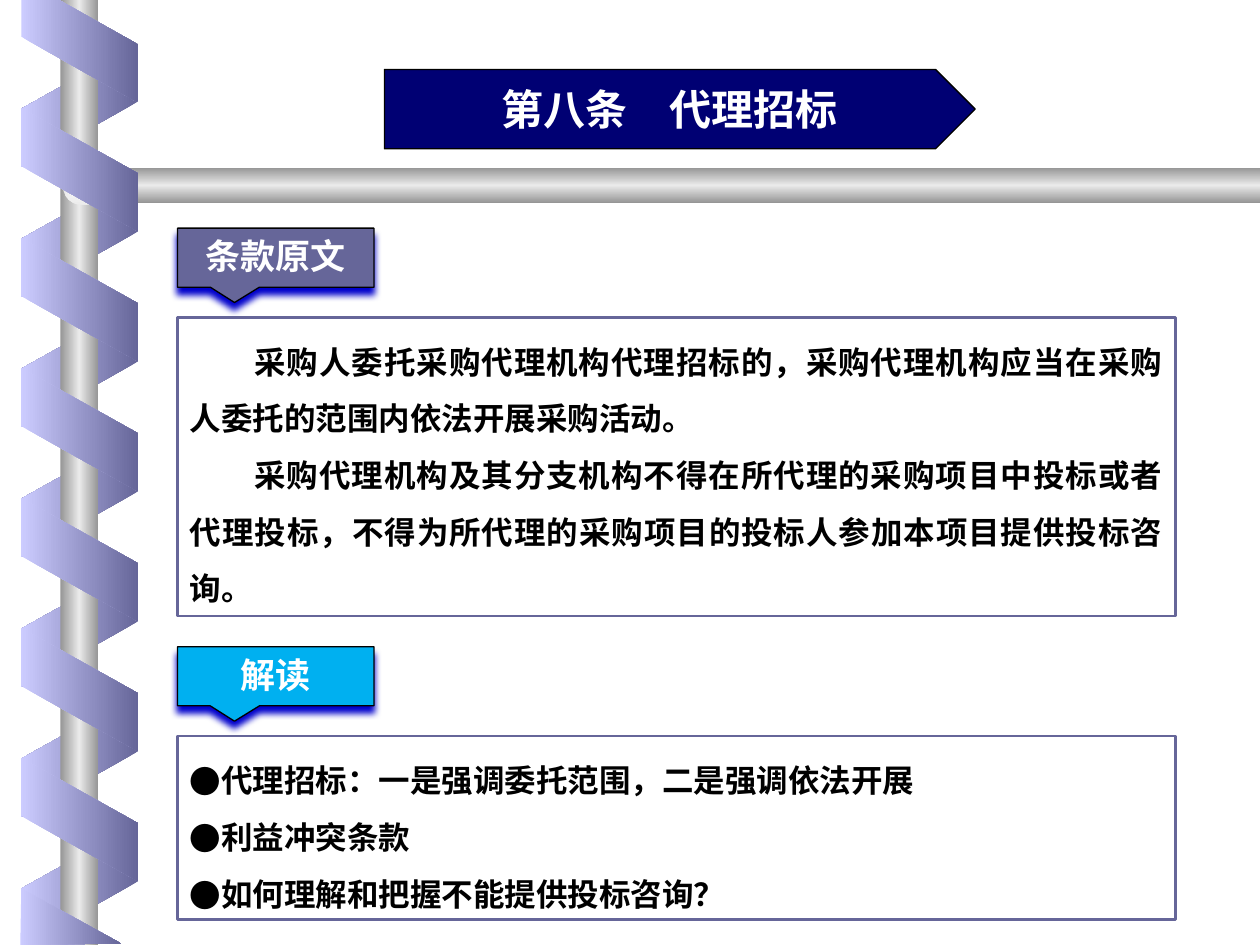
from dataclasses import dataclass

from lxml import etree
from pptx import Presentation
from pptx import util as u
from pptx.dml.color import RGBColor
from pptx.enum import shapes, text
from pptx.oxml.ns import qn


@dataclass(frozen=True)
class Theme:
    """Colours, fonts and type sizes of the slide."""
    violet: str = "666699"
    lavender: str = "CCCCFF"
    steel: str = "969696"
    silver: str = "EAEAEA"
    pearl: str = "FEFFFF"
    navy: str = "000073"
    sky: str = "00B0F0"
    glow: str = "0000CC"
    black: str = "000000"
    white: str = "FFFFFF"
    latin: str = "Times New Roman"
    chinese: str = "Noto Sans CJK SC"
    title: int = 24
    label: int = 20
    body: int = 18


@dataclass(frozen=True)
class Box:
    """A region in centimetres."""
    left: float
    top: float
    width: float
    height: float

    def inner(self, left, top, width, height):
        """Return a box placed relative to this one."""
        return Box(self.left + left, self.top + top, width, height)


THEME = Theme()
KIND = shapes.MSO_SHAPE
BAND_PITCH = 2.62
BAND_SIZE = (2.49, 2.36)


def style_outline(shape, fill=None, line=None, weight=0.75):
    """Set solid fill, line and no shadow."""
    shape.shadow.inherit = False
    if fill:
        shape.fill.solid()
        shape.fill.fore_color.rgb = RGBColor.from_string(fill)
    else:
        shape.fill.background()
    if line:
        shape.line.color.rgb = RGBColor.from_string(line)
        shape.line.width = u.Pt(weight)
    else:
        shape.line.fill.background()


def add_preset(slide, kind, box, adjustments=(), **style):
    """Add a styled preset shape in a box."""
    lengths = map(u.Cm, (box.left, box.top, box.width, box.height))
    shape = slide.shapes.add_shape(kind, *lengths)
    for index, value in enumerate(adjustments):
        shape.adjustments[index] = value
    style_outline(shape, **style)
    return shape


def fill_gradient(shape, colours, angle=0, radial=False):
    """Fill a shape with evenly spaced gradient stops."""
    shape.fill.gradient()
    gradient = shape._element.spPr.find(qn("a:gradFill"))
    for child in list(gradient):
        gradient.remove(child)
    gradient.set("rotWithShape", "0")
    stops = etree.SubElement(gradient, qn("a:gsLst"))
    for index, colour in enumerate(colours):
        position = 100000 * index // (len(colours) - 1)
        stop = etree.SubElement(stops, qn("a:gs"), pos=str(position))
        etree.SubElement(stop, qn("a:srgbClr"), val=colour)
    if radial:
        centre = etree.SubElement(gradient, qn("a:path"))
        centre.set("path", "shape")
        sides = dict.fromkeys("ltrb", "50000")
        etree.SubElement(centre, qn("a:fillToRect"), sides)
    else:
        etree.SubElement(gradient, qn("a:lin"), ang=str(angle * 60000), scaled="1")


def add_glow(shape, colour):
    """Give a shape a soft coloured shadow below it."""
    effects = shape._element.spPr.find(qn("a:effectLst"))
    distance = str(u.Pt(4))
    shadow = etree.SubElement(effects, qn("a:outerShdw"), blurRad=distance,
                              dist=distance, dir="5400000", rotWithShape="0")
    etree.SubElement(shadow, qn("a:srgbClr"), val=colour)


def write_text(shape, lines, *, size, colour, latin=THEME.latin,
               align=text.PP_ALIGN.CENTER, anchor=text.MSO_ANCHOR.TOP,
               spacing=None, indent=0, bullet=None, grow=False):
    """Write bold paragraphs into a shape."""
    frame = shape.text_frame
    frame.word_wrap = True
    frame.vertical_anchor = anchor
    if grow:
        frame.auto_size = text.MSO_AUTO_SIZE.SHAPE_TO_FIT_TEXT
    for index, line in enumerate(lines):
        paragraph = frame.add_paragraph() if index else frame.paragraphs[0]
        paragraph.alignment = align
        paragraph.line_spacing = spacing
        properties = paragraph._p.get_or_add_pPr()
        properties.set("marL", "0")
        properties.set("indent", str(u.Cm(indent)))
        if bullet:
            etree.SubElement(properties, qn("a:buFont"), typeface=THEME.chinese)
            etree.SubElement(properties, qn("a:buChar"), char=bullet)
        run = paragraph.add_run()
        run.text = line
        run.font.size = u.Pt(size)
        run.font.bold = True
        run.font.name = latin
        run.font.color.rgb = RGBColor.from_string(colour)
        etree.SubElement(run._r.rPr, qn("a:ea"), typeface=THEME.chinese)


def add_bands(slide, box, first_top, count, rotation, colours, flip=False):
    """Add one slanting set of ribbon bands at an equal pitch."""
    for index in range(count):
        place = box.inner(-0.05, first_top + index * BAND_PITCH, *BAND_SIZE)
        band = add_preset(slide, KIND.PARALLELOGRAM, place, (0.56,))
        band.rotation = rotation
        if flip:
            band._element.spPr.xfrm.set("flipH", "1")
        fill_gradient(band, colours)


def add_ribbon_end(slide, box, points):
    """Add a cut ribbon end from points relative to the box."""
    start, *rest = [(u.Cm(box.left + x), u.Cm(box.top + y)) for x, y in points]
    builder = slide.shapes.build_freeform(*start)
    builder.add_line_segments(rest, close=True)
    shape = builder.convert_to_shape()
    style_outline(shape)
    fill_gradient(shape, (THEME.lavender, THEME.violet))


def add_rails(slide, box):
    """Add the upright pole, the cross bar and their joint."""
    metal = (THEME.steel, THEME.silver, THEME.steel)
    pole = add_preset(slide, KIND.RECTANGLE, box.inner(1.22, 0, 0.76, box.height))
    fill_gradient(pole, metal)
    bar = add_preset(slide, KIND.PENTAGON,
                     box.inner(1.52, 3.38, box.width - 1.52, 0.71), (0.59,))
    bar._element.spPr.xfrm.set("flipH", "1")
    fill_gradient(bar, metal, angle=90)
    joint = add_preset(slide, KIND.OVAL, box.inner(1.27, 3.38, 0.81, 0.76))
    fill_gradient(joint, (THEME.pearl, THEME.silver), radial=True)


def add_frame(slide, box):
    """Add the ribbon winding behind and in front of the rails."""
    ribbon = box.inner(0.41, 0, 2.36, box.height)
    colours = (THEME.lavender, THEME.violet)
    add_bands(slide, ribbon, 0.94, 7, 90, colours[::-1], flip=True)
    add_rails(slide, box)
    add_bands(slide, ribbon, 2.24, 6, 270, colours)
    add_ribbon_end(slide, ribbon, [(0.02, 0), (0.02, 0.74), (2.36, 2.06),
                                   (2.36, 0.89), (0.78, 0)])
    add_ribbon_end(slide, ribbon, [(2.03, 19.02), (0.02, 17.91), (0, 19.05)])


def add_title(slide, box, title):
    """Add the arrow-shaped title."""
    shape = add_preset(slide, KIND.PENTAGON, box, fill=THEME.navy, line=THEME.black)
    write_text(shape, [title], size=THEME.title, colour=THEME.white,
               anchor=text.MSO_ANCHOR.MIDDLE)


def add_section(slide, box, label, colour, lines, indent, bullet=None):
    """Add a text panel with its callout label above."""
    panel = add_preset(slide, KIND.RECTANGLE,
                       box.inner(0, 1.8, box.width, box.height - 1.8),
                       line=THEME.violet, weight=1.5)
    write_text(panel, lines, size=THEME.body, colour=THEME.black,
               latin=THEME.chinese, align=text.PP_ALIGN.JUSTIFY, spacing=1.5,
               indent=indent, bullet=bullet, grow=True)
    callout = add_preset(slide, KIND.RECTANGULAR_CALLOUT, box.inner(0, 0, 3.96, 1.19),
                         (-0.21, 0.76), fill=colour, line=THEME.black)
    add_glow(callout, THEME.glow)
    write_text(callout, [label], size=THEME.label, colour=THEME.white)


def main():
    """Build and save the slide."""
    presentation = Presentation()
    presentation.slide_width, presentation.slide_height = u.Cm(25.4), u.Cm(19.05)
    slide = presentation.slides.add_slide(presentation.slide_layouts[6])
    add_frame(slide, Box(0, 0, 25.4, 19.05))
    add_title(slide, Box(7.75, 1.4, 11.91, 1.6), "第八条　代理招标")
    add_section(slide, Box(3.58, 4.6, 20.12, 7.82), "条款原文", THEME.violet, [
        "采购人委托采购代理机构代理招标的，采购代理机构应当在采购人委托的范围内依法开展采购活动。",
        "采购代理机构及其分支机构不得在所代理的采购项目中投标或者代理投标，"
        "不得为所代理的采购项目的投标人参加本项目提供投标咨询。",
    ], indent=1.3)
    add_section(slide, Box(3.58, 13.04, 20.12, 5.5), "解读", THEME.sky, [
        "代理招标：一是强调委托范围，二是强调依法开展",
        "利益冲突条款",
        "如何理解和把握不能提供投标咨询？",
    ], indent=-0.79, bullet="●")
    presentation.save("out.pptx")


if __name__ == "__main__":
    main()
